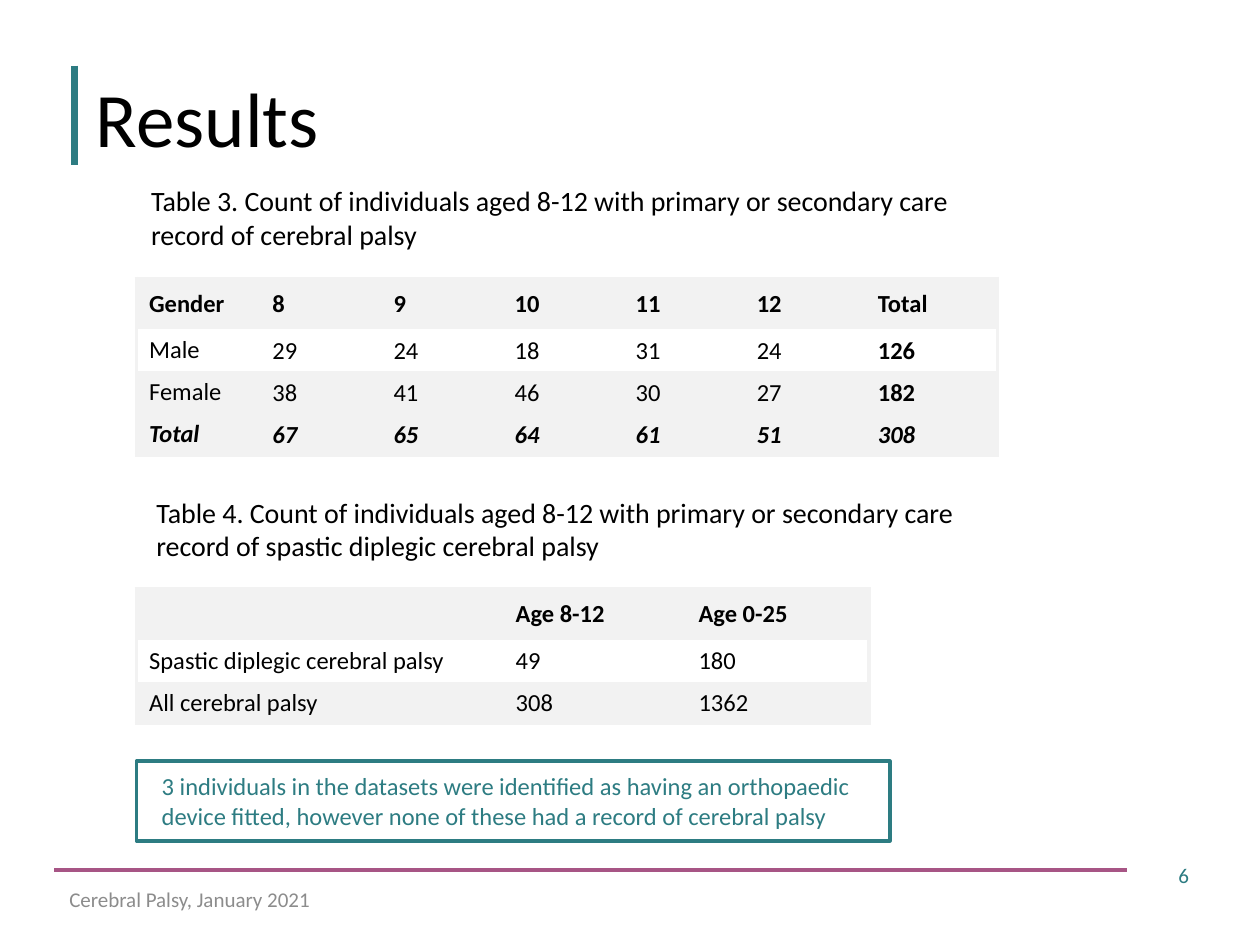
from dataclasses import dataclass

from lxml.etree import SubElement
from pptx import Presentation
from pptx.dml.color import RGBColor
from pptx.enum.shapes import MSO_CONNECTOR as Connector, MSO_SHAPE as Shape
from pptx.enum.text import MSO_ANCHOR as Anchor, PP_ALIGN as Align
from pptx.oxml import parse_xml
from pptx.oxml.ns import nsdecls, qn
from pptx.util import Pt

# Content
TITLE = "Results"
FOOTER = "Cerebral Palsy, January 2021"
PAGE = "6"
CAPTIONS = [
    ("Table 3. Count of individuals aged 8-12 with primary or secondary care "
     "record of cerebral palsy", (72, 105)),
    ("Table 4. Count of individuals aged 8-12 with primary or secondary care "
     "record of spastic diplegic cerebral palsy", (75, 283)),
]
FINDING = ("3 individuals in the datasets were identified as having an orthopaedic "
           "device fitted, however none of these had a record of cerebral palsy")
GENDER_COUNTS = [
    ["Gender", "8", "9", "10", "11", "12", "Total"],
    ["Male", "29", "24", "18", "31", "24", "126"],
    ["Female", "38", "41", "46", "30", "27", "182"],
    ["Total", "67", "65", "64", "61", "51", "308"],
]
DIPLEGIC_COUNTS = [
    ["", "Age 8-12", "Age 0-25"],
    ["Spastic diplegic cerebral palsy", "49", "180"],
    ["All cerebral palsy", "308", "1362"],
]


@dataclass(frozen=True)
class Theme:
    font: str = "Calibri"
    ink: str = "000000"
    teal: str = "2D7C82"
    plum: str = "A75585"
    grey: str = "8C8C8C"
    band: str = "F2F2F2"
    paper: str = "FFFFFF"
    title: int = 44
    caption: int = 16
    body: int = 14
    small: int = 12


theme = Theme()
CELL_INSETS = (7.2, 3.6, 7.2, 3.6)
TIGHT_INSETS = (0.7, 0.7, 0.7, 0)
HEADER_HEIGHT, ROW_HEIGHT = 29, 24


def rgb(value):
    return RGBColor.from_string(value)


def write(frame, text, size=theme.body, color=theme.ink, bold=False, italic=False,
          align=Align.LEFT, anchor=Anchor.MIDDLE, insets=CELL_INSETS):
    """Put formatted text in a text frame."""
    frame.word_wrap = True
    frame.vertical_anchor = anchor
    (frame.margin_left, frame.margin_top,
     frame.margin_right, frame.margin_bottom) = map(Pt, insets)
    paragraph = frame.paragraphs[0]
    paragraph.alignment = align
    run = paragraph.add_run()
    run.text = text
    font = run.font
    font.name, font.size, font.bold, font.italic = theme.font, Pt(size), bold, italic
    font.color.rgb = rgb(color)


def add_rule(slide, start, end, color, width):
    rule = slide.shapes.add_connector(Connector.STRAIGHT, *map(Pt, start + end))
    rule.line.color.rgb = rgb(color)
    rule.line.width = Pt(width)
    SubElement(rule._element.spPr, qn("a:effectLst"))


def add_panel(slide, box, text, outline=None, **style):
    panel = slide.shapes.add_shape(Shape.RECTANGLE, *map(Pt, box))
    panel.shadow.inherit = False
    panel.fill.solid()
    panel.fill.fore_color.rgb = rgb(theme.paper)
    if outline:
        panel.line.color.rgb = rgb(outline)
        panel.line.width = Pt(2)
    else:
        panel.line.fill.background()
    write(panel.text_frame, text, anchor=Anchor.TOP, **style)


def add_label(slide, box, text, **style):
    write(slide.shapes.add_textbox(*map(Pt, box)).text_frame, text,
          size=theme.small, **style)


def set_borders(cell, outer_sides):
    """Draw the table's outer edge and clear the inner lines."""
    solid = f'<a:solidFill><a:srgbClr val="{theme.band}"/></a:solidFill>'
    for place, side in enumerate("LRTB"):
        paint = solid if side in outer_sides else "<a:noFill/>"
        cell._tc.get_or_add_tcPr().insert(place, parse_xml(
            f'<a:ln{side} {nsdecls("a")} w="{Pt(2.25)}">{paint}</a:ln{side}>'))


def add_counts(slide, left, top, widths, rows, tight=False, totals=False):
    """Add a count table; totals marks a final row and column of sums."""
    heights = [HEADER_HEIGHT] + [ROW_HEIGHT] * (len(rows) - 1)
    table = slide.shapes.add_table(
        len(rows), len(widths), Pt(left), Pt(top),
        Pt(sum(widths)), Pt(sum(heights))).table
    table.first_row = table.horz_banding = False
    for column, width in zip(table.columns, widths):
        column.width = Pt(width)
    for row, height in zip(table.rows, heights):
        row.height = Pt(height)

    last_row, last_col = len(rows) - 1, len(widths) - 1
    for r, values in enumerate(rows):
        for c, value in enumerate(values):
            cell = table.cell(r, c)
            if r == 1:
                cell.fill.background()
            else:
                cell.fill.solid()
                cell.fill.fore_color.rgb = rgb(theme.band)
            edges = {"L": c == 0, "R": c == last_col, "T": r == 0, "B": r == last_row}
            set_borders(cell, [side for side, outer in edges.items() if outer])

            insets = TIGHT_INSETS if tight and c else CELL_INSETS
            (cell.margin_left, cell.margin_top,
             cell.margin_right, cell.margin_bottom) = map(Pt, insets)
            cell.vertical_anchor = Anchor.MIDDLE
            if value:
                sum_row = totals and r == last_row
                sum_col = totals and c == last_col
                write(cell.text_frame, value, insets=insets, italic=sum_row,
                      bold=r == 0 or sum_row or sum_col)


def main():
    deck = Presentation()
    deck.slide_width, deck.slide_height = Pt(720), Pt(540)
    slide = deck.slides.add_slide(deck.slide_layouts[5])

    # Title and rules
    add_rule(slide, (42.5, 37.5), (42.5, 94.5), theme.teal, 4)
    add_rule(slide, (31, 497), (644, 497), theme.plum, 2)
    title = slide.shapes.title
    title.left, title.top, title.width, title.height = map(Pt, (47.5, 21.5, 618.5, 90))
    write(title.text_frame, TITLE, size=theme.title)

    # Footer
    add_label(slide, (32.5, 499, 228, 29), FOOTER, color=theme.grey)
    add_label(slide, (518.5, 485.5, 168, 29), PAGE, color=theme.teal, align=Align.RIGHT)

    # Captions and tables
    for text, position in CAPTIONS:
        add_panel(slide, position + (498, 39), text, size=theme.caption,
                  insets=(14.4, 0, 14.4, 0))
    add_counts(slide, 78, 159, [77] + [69.2] * 6, GENDER_COUNTS,
               tight=True, totals=True)
    add_counts(slide, 78, 336.5, [209.5, 104.5, 104.5], DIPLEGIC_COUNTS)

    # Finding
    add_panel(slide, (78, 435, 430.5, 45.5), FINDING, outline=theme.teal,
              color=theme.teal, insets=(14.4, 5.8, 14.4, 5.8))

    deck.save("out.pptx")


if __name__ == "__main__":
    main()
